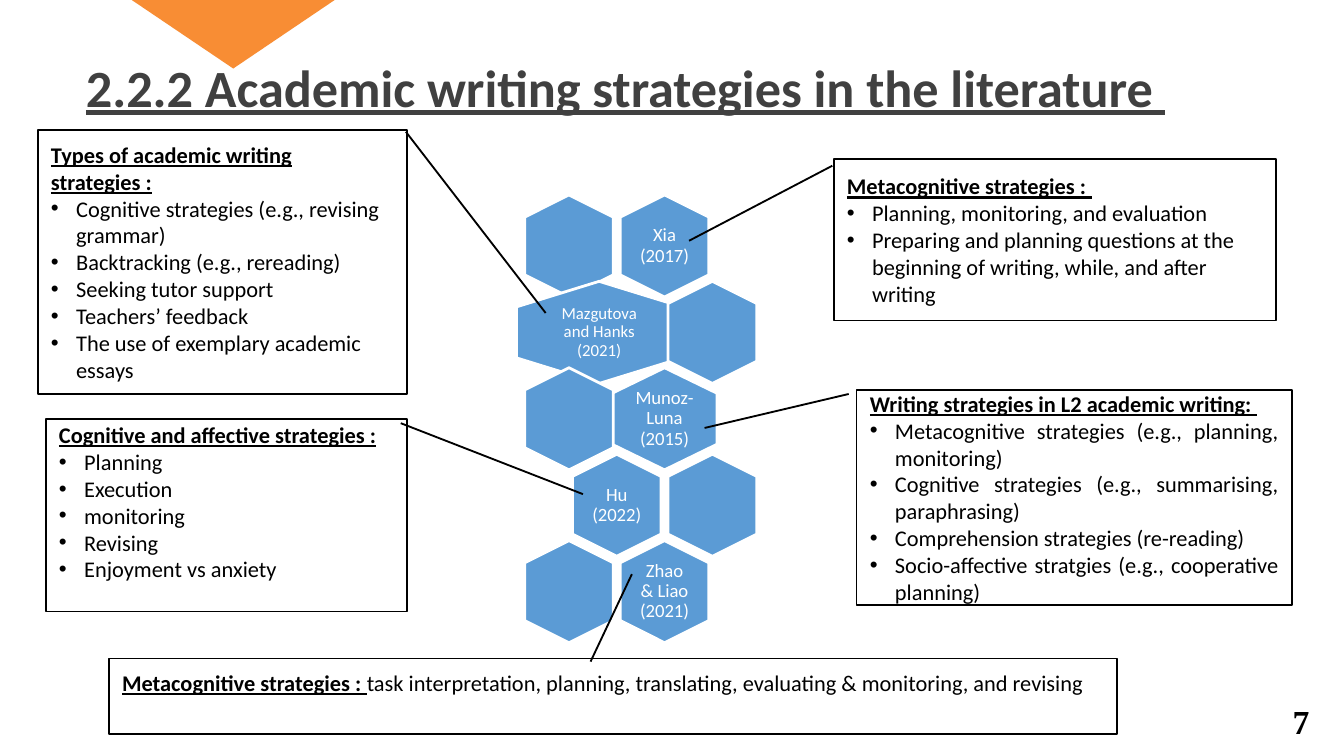
from lxml import etree
from pptx import Presentation
from pptx.dml.color import RGBColor
from pptx.enum.shapes import MSO_SHAPE as Shape
from pptx.enum.text import MSO_ANCHOR as Anchor, PP_ALIGN as Align
from pptx.oxml.ns import qn
from pptx.util import Pt


def color(hex_string):
    return RGBColor.from_string(hex_string)


class SlideBuilder:
    FONT = "Calibri"
    BLACK, WHITE, BLUE = "000000", "FFFFFF", "5B9BD5"
    ORANGE, GREY = "F88D34", "404040"
    BODY_SIZE = 12
    INDENT = 13.5

    def __init__(self, slide):
        self.slide = slide

    def shape(self, kind, left, top, width, height, fill, line=None, weight=1):
        shape = self.slide.shapes.add_shape(
            kind, Pt(left), Pt(top), Pt(width), Pt(height))
        shape.shadow.inherit = False
        shape.fill.solid()
        shape.fill.fore_color.rgb = color(fill)
        if line:
            shape.line.color.rgb = color(line)
            shape.line.width = Pt(weight)
        else:
            shape.line.fill.background()
        return shape

    def style(self, run, size, hex_color, bold=False, underline=False, font=FONT):
        run.font.name = font
        run.font.size = Pt(size)
        run.font.color.rgb = color(hex_color)
        run.font.bold = bold
        run.font.underline = underline

    def text(self, content, left, top, width, height, size, hex_color,
             align=Align.LEFT, **style):
        box = self.slide.shapes.add_textbox(
            Pt(left), Pt(top), Pt(width), Pt(height))
        frame = box.text_frame
        frame.word_wrap = True
        frame.text = content
        paragraph = frame.paragraphs[0]
        paragraph.alignment = align
        self.style(paragraph.runs[0], size, hex_color, **style)
        return frame

    def hexagon(self, center_x, center_y, width):
        height = 54.7
        shape = self.shape(Shape.HEXAGON, center_x - height / 2,
                           center_y - width / 2, height, width,
                           self.BLUE, self.WHITE, 1.5)
        shape.adjustments[0] = 0.25
        shape.rotation = 90

    def label(self, content, center_x, center_y, width, size):
        height = 37
        frame = self.text(content, center_x - width / 2, center_y - height / 2,
                          width, height, size, self.WHITE, Align.CENTER)
        frame.margin_left = frame.margin_right = Pt(2.5)
        frame.margin_top = frame.margin_bottom = Pt(2.5)
        frame.vertical_anchor = Anchor.MIDDLE
        frame.paragraphs[0].line_spacing = 0.9

    def bullet(self, paragraph):
        properties = paragraph._p.get_or_add_pPr()
        properties.set("marL", str(Pt(self.INDENT)))
        properties.set("indent", str(-Pt(self.INDENT)))
        etree.SubElement(properties, qn("a:buFont")).set("typeface", "Arial")
        etree.SubElement(properties, qn("a:buChar")).set("char", "•")

    def callout(self, bounds, pointer, heading, items=(), body="",
                align=Align.LEFT, space_below=0):
        shape = self.shape(Shape.LINE_CALLOUT_1, *bounds, self.WHITE, self.BLACK)
        for index, value in enumerate(pointer):
            shape.adjustments[index] = value
        frame = shape.text_frame
        frame.word_wrap = True
        frame.vertical_anchor = Anchor.MIDDLE
        frame.margin_bottom = Pt(3.6 + space_below)
        frame.text = heading
        title = frame.paragraphs[0]
        title.alignment = Align.LEFT
        self.style(title.runs[0], self.BODY_SIZE, self.BLACK, True, True)
        if body:
            run = title.add_run()
            run.text = body
            self.style(run, self.BODY_SIZE, self.BLACK)
        for item in items:
            paragraph = frame.add_paragraph()
            paragraph.text = item
            paragraph.alignment = align
            self.bullet(paragraph)
            self.style(paragraph.runs[0], self.BODY_SIZE, self.BLACK)


# Honeycomb rows, each a pair of (label, hexagon width, label width, size, shift)
EMPTY = ("", 47.5, 0, 0, 0)
HONEYCOMB = [
    [EMPTY, ("Xia (2017)", 47.5, 32.4, 10, 0)],
    [("Mazgutova and Hanks (2021)", 88.6, 59, 9, -9.4), EMPTY],
    [EMPTY, ("Munoz-Luna (2015)", 56.2, 37.4, 10, 0)],
    [("Hu (2022)", 47.5, 32.4, 10, 0), EMPTY],
    [EMPTY, ("Zhao & Liao (2021)", 47.5, 32.4, 10, 0)],
]
FIRST_X, FIRST_Y = 304.8, 131.8
COLUMN_STEP, ROW_STEP = 51.2, 46.3
LINE_HEIGHT = 14.4

CALLOUTS = [
    dict(bounds=(458.9, 208.9, 233.3, 115.2),
         pointer=(0.019, -0.018, 0.177, -0.349),
         heading="Writing strategies in L2 academic writing: ",
         items=["Metacognitive strategies (e.g., planning, monitoring)",
                "Cognitive strategies (e.g., summarising, paraphrasing)",
                "Comprehension strategies (re-reading)",
                "Socio-affective stratgies (e.g., cooperative planning)"],
         align=Align.JUSTIFY),
    dict(bounds=(446.6, 85.3, 236.9, 86.4),
         pointer=(0.041, -0.003, 0.506, -0.327),
         heading="Metacognitive strategies : ",
         items=["Planning, monitoring, and evaluation",
                "Preparing and planning questions at the beginning of writing, "
                "while, and after writing"]),
    dict(bounds=(20.2, 69.8, 197.6, 141.1),
         pointer=(0.694, 1.377, 0.006, 0.998),
         heading="Types of academic writing strategies :",
         items=["Cognitive strategies (e.g., revising grammar)",
                "Backtracking (e.g., rereading)",
                "Seeking tutor support",
                "Teachers’ feedback",
                "The use of exemplary academic essays"]),
    dict(bounds=(24.5, 224.6, 193.7, 103),
         pointer=(0.39, 1.486, 0.021, 0.982),
         heading="Cognitive and affective strategies :",
         items=["Planning", "Execution", "monitoring", "Revising",
                "Enjoyment vs anxiety"],
         space_below=LINE_HEIGHT),
    dict(bounds=(58.3, 352.8, 540, 40.3),
         pointer=(-1.121, 0.519, 0.042, 0.478),
         heading="Metacognitive strategies : ",
         body="task interpretation, planning, translating, evaluating & "
              "monitoring, and revising",
         space_below=LINE_HEIGHT),
]


def main():
    presentation = Presentation()
    presentation.slide_width, presentation.slide_height = Pt(720), Pt(405)
    slide = presentation.slides.add_slide(presentation.slide_layouts[6])
    builder = SlideBuilder(slide)

    # Top marker and title
    marker = builder.shape(Shape.ISOSCELES_TRIANGLE, 70.6, 0, 108.7, 36.7,
                           builder.ORANGE)
    marker.rotation = 180
    builder.text("2.2.2 Academic writing strategies in the literature ",
                 -11, 25.9, 692, 41, 28, builder.GREY, Align.CENTER,
                 bold=True, underline=True)

    # Honeycomb: odd rows move half a column right, labelled cells lie below
    for row, cells in enumerate(HONEYCOMB):
        center_y = FIRST_Y + row * ROW_STEP
        ordered = sorted(enumerate(cells), key=lambda cell: not cell[1][0])
        for column, (label, width, label_width, size, shift) in ordered:
            center_x = FIRST_X + (column + row % 2 / 2) * COLUMN_STEP + shift
            builder.hexagon(center_x, center_y, width)
            if label:
                builder.label(label, center_x, center_y, label_width, size)

    # Callouts with their leader lines
    for callout in CALLOUTS:
        builder.callout(**callout)

    # Page number
    builder.text("7", 685.4, 372.2, 24, 22, 18, builder.BLACK, bold=True,
                 font="Times New Roman")

    presentation.save("out.pptx")


if __name__ == "__main__":
    main()
